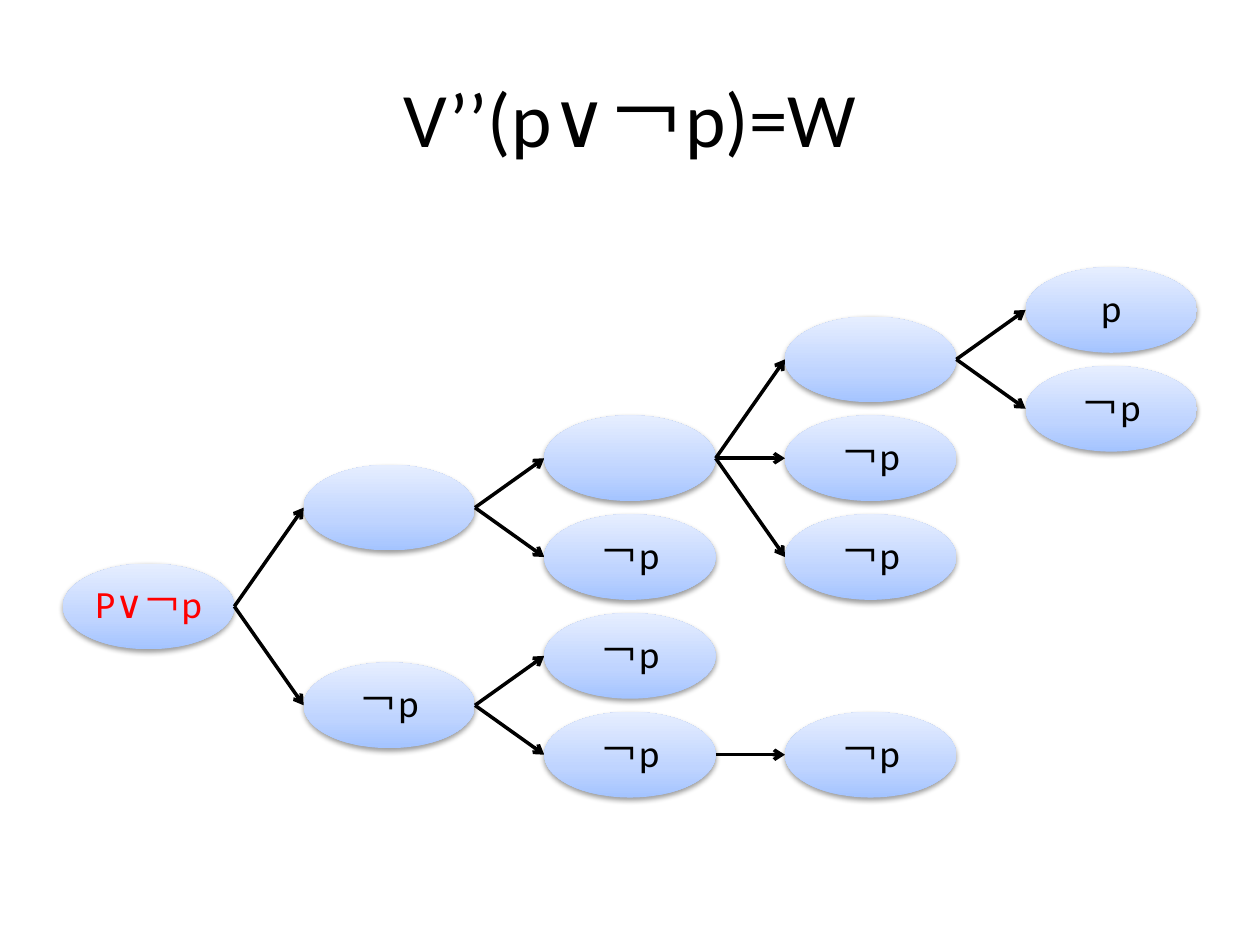
from lxml import etree
from pptx import Presentation
from pptx.dml.color import RGBColor
from pptx.enum.shapes import MSO_CONNECTOR, MSO_SHAPE
from pptx.enum.text import MSO_ANCHOR, PP_ALIGN
from pptx.oxml.ns import qn
from pptx.util import Inches, Pt

OVAL = MSO_SHAPE.OVAL
LINE = MSO_CONNECTOR.STRAIGHT
MIDDLE = MSO_ANCHOR.MIDDLE
CENTER = PP_ALIGN.CENTER

WIDE, HIGH = 1.36, 0.68
LEFT, TOP = 0.5, 2.12
COL_STEP = (8.14 - LEFT) / 4
ROW_STEP = (5.65 - TOP) / 9
BLACK, RED = "000000", "FF0000"
STOPS = [(0, "A4C4FF"), (35, "BFD4FF"), (100, "E6EEFF")]
FRAME = {"word_wrap": False, "vertical_anchor": MIDDLE,
         "margin_left": Inches(0.02), "margin_right": Inches(0.02),
         "margin_top": Inches(0.02), "margin_bottom": Inches(0.02)}

NOT_P = "￢p"
TREE = (6, "P∨￢p", [
    (4, "", [
        (3, "", [
            (1, "", [(0, "p", []), (2, NOT_P, [])]),
            (3, NOT_P, []),
            (5, NOT_P, []),
        ]),
        (5, NOT_P, []),
    ]),
    (8, NOT_P, [
        (7, NOT_P, []),
        (9, NOT_P, [(9, NOT_P, [])]),
    ]),
])


def color(code):
    return RGBColor.from_string(code)


def apply(item, values):
    for name, value in values.items():
        setattr(item, name, value)


def add(parent, tag, **values):
    node = etree.SubElement(parent, qn(tag))
    for name, value in values.items():
        node.set(name, str(value))
    return node


def write(frame, text, size, code):
    para = frame.paragraphs[0]
    para.alignment = CENTER
    run = para.add_run()
    run.text = text
    apply(run.font, {"name": "Calibri", "size": Pt(size)})
    run.font.color.rgb = color(code)
    return para


def shade(shape):
    props = shape.element.spPr
    grad = etree.Element(qn("a:gradFill"), rotWithShape="1")
    stops = add(grad, "a:gsLst")
    for place, code in STOPS:
        stop = add(stops, "a:gs", pos=place * 1000)
        add(stop, "a:srgbClr", val=code)
    add(grad, "a:lin", ang=270 * 60000, scaled=0)
    props.find(qn("a:prstGeom")).addnext(grad)
    shape.line.fill.background()
    shape.shadow.inherit = False
    glow = add(props.find(qn("a:effectLst")), "a:outerShdw", blurRad=Pt(3.1),
               dist=Pt(1.6), dir=90 * 60000, rotWithShape=0)
    add(add(glow, "a:srgbClr", val=BLACK), "a:alpha", val=38000)


def add_oval(slide, col, row, text):
    shape = slide.shapes.add_shape(
        OVAL, Inches(LEFT + col * COL_STEP), Inches(TOP + row * ROW_STEP),
        Inches(WIDE), Inches(HIGH))
    shade(shape)
    if text:
        frame = shape.text_frame
        apply(frame, FRAME)
        para = write(frame, text, 22, BLACK if col else RED)
        para.line_spacing = 0.9


def add_arrow(slide, col, start, end):
    left = LEFT + col * COL_STEP + WIDE
    right = LEFT + (col + 1) * COL_STEP
    mid = TOP + HIGH / 2
    arrow = slide.shapes.add_connector(
        LINE, Inches(left), Inches(mid + start * ROW_STEP),
        Inches(right), Inches(mid + end * ROW_STEP))
    arrow.line.width = Pt(2)
    arrow.line.color.rgb = color(BLACK)
    props = arrow.element.spPr
    add(props.find(qn("a:ln")), "a:tailEnd", type="arrow")
    add(props, "a:effectLst")


def add_tree(slide, tree, col=0):
    row, text, kids = tree
    add_oval(slide, col, row, text)
    for kid in kids:
        add_arrow(slide, col, row, kid[0])
        add_tree(slide, kid, col + 1)


def add_title(slide, text):
    title = slide.shapes.title
    apply(title, {"left": Inches(0.5), "top": Inches(0.3),
                  "width": Inches(9), "height": Inches(1.25)})
    title.text_frame.vertical_anchor = MIDDLE
    write(title.text_frame, text, 44, BLACK)


def main():
    deck = Presentation()
    apply(deck, {"slide_width": Inches(10), "slide_height": Inches(7.5)})
    slide = deck.slides.add_slide(deck.slide_layouts[5])
    add_title(slide, "V’’(p∨￢p)=W")
    add_tree(slide, TREE)
    deck.save("out.pptx")


if __name__ == "__main__":
    main()
